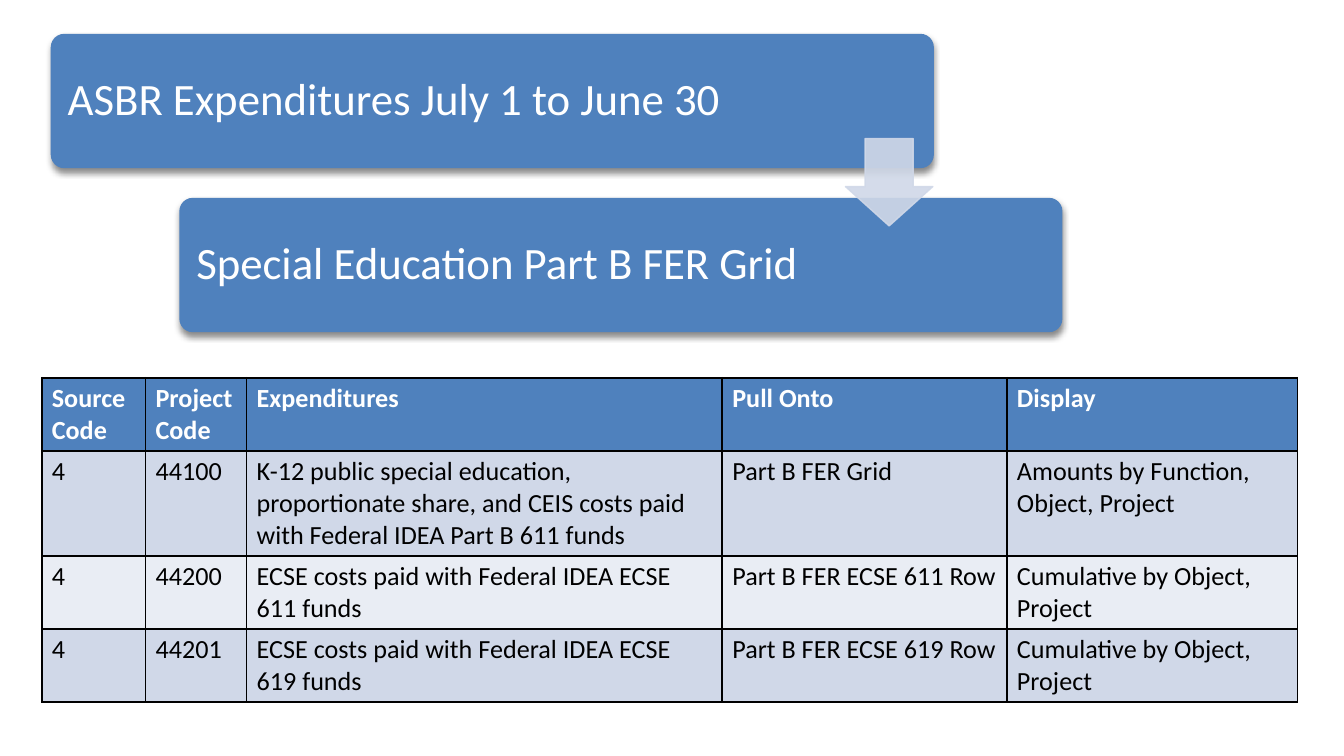
from lxml import etree
from pptx import Presentation
from pptx.dml.color import RGBColor
from pptx.enum.shapes import MSO_SHAPE
from pptx.enum.text import MSO_ANCHOR, MSO_AUTO_SIZE, PP_ALIGN
from pptx.oxml.ns import qn
from pptx.util import Cm, Pt

ROUNDED, DOWN_ARROW = MSO_SHAPE.ROUNDED_RECTANGLE, MSO_SHAPE.DOWN_ARROW
MIDDLE, LEFT, NO_FIT = MSO_ANCHOR.MIDDLE, PP_ALIGN.LEFT, MSO_AUTO_SIZE.NONE
FONT = "Calibri"
BLUE, PALE, PALER = "4F81BD", "D0D8E8", "E9EDF4"
BLACK, WHITE = "000000", "FFFFFF"

STEPS = ["ASBR Expenditures July 1 to June 30", "Special Education Part B FER Grid"]
STEP_LEFT, STEP_TOP, STEP_WIDTH, STEP_HEIGHT = 0.96, 0.64, 16.69, 2.54
SHIFT_RIGHT, SHIFT_DOWN = 2.43, 3.1
LABEL_INSET, LABEL_WIDTHS = 0.07, [14.07, 11.94]
ARROW_BOX = (15.98, 2.62, 1.65, 1.65)

TABLE_LEFT, TABLE_TOP = 0.79, 7.14
COLUMNS = [("Source Code", 1.96), ("Project Code", 1.91), ("Expenditures", 8.99),
           ("Pull Onto", 5.38), ("Display", 5.49)]
ROWS = [
    ("4", "44100", "K-12 public special education, proportionate share, and CEIS costs "
     "paid with Federal IDEA Part B 611 funds", "Part B FER Grid",
     "Amounts by Function, Object, Project"),
    ("4", "44200", "ECSE costs paid with Federal IDEA ECSE 611 funds",
     "Part B FER ECSE 611 Row", "Cumulative by Object, Project"),
    ("4", "44201", "ECSE costs paid with Federal IDEA ECSE 619 funds",
     "Part B FER ECSE 619 Row", "Cumulative by Object, Project"),
]
ROW_HEIGHTS = [1.35, 1.91, 1.35, 1.35]


def rgb(color):
    return RGBColor.from_string(color)


def paint(fill, color):
    fill.solid()
    fill.fore_color.rgb = rgb(color)


def add_child(parent, tag, **attributes):
    return etree.SubElement(parent, qn(tag), {key: str(value) for key, value in attributes.items()})


def write(paragraph, text, size, color, bold=False):
    run = paragraph.add_run()
    run.text = text
    run.font.name, run.font.size, run.font.bold = FONT, Pt(size), bold
    run.font.color.rgb = rgb(color)


def add_step(slide, left, top):
    step = slide.shapes.add_shape(ROUNDED, Cm(left), Cm(top), Cm(STEP_WIDTH), Cm(STEP_HEIGHT))
    step.adjustments[0] = 0.1
    paint(step.fill, BLUE)
    step.line.fill.background()
    step.shadow.inherit = False
    effects = step._element.spPr.find(qn("a:effectLst"))
    shadow = add_child(effects, "a:outerShdw", blurRad=Pt(3), dist=Pt(2.4), dir=5400000,
                       rotWithShape=0)
    add_child(add_child(shadow, "a:srgbClr", val=BLACK), "a:alpha", val=45000)


def set_label(label, text, left, top, width):
    label.left, label.top = Cm(left + LABEL_INSET), Cm(top + LABEL_INSET)
    label.width, label.height = Cm(width), Cm(STEP_HEIGHT - 2 * LABEL_INSET)
    frame = label.text_frame
    frame.word_wrap, frame.auto_size, frame.vertical_anchor = True, NO_FIT, MIDDLE
    frame.margin_left = frame.margin_right = frame.margin_top = frame.margin_bottom = Cm(0.25)
    paragraph = frame.paragraphs[0]
    paragraph.alignment, paragraph.line_spacing = LEFT, 0.9
    write(paragraph, text, 24, WHITE)


def add_steps(slide):
    title = slide.shapes.title
    for index, (text, width) in enumerate(zip(STEPS, LABEL_WIDTHS)):
        left, top = STEP_LEFT + index * SHIFT_RIGHT, STEP_TOP + index * SHIFT_DOWN
        add_step(slide, left, top)
        if index == 0:
            slide.shapes._spTree.append(title._element)
            label = title
        else:
            label = slide.shapes.add_textbox(0, 0, 0, 0)
        set_label(label, text, left, top, width)


def add_arrow(slide):
    arrow = slide.shapes.add_shape(DOWN_ARROW, *map(Cm, ARROW_BOX))
    arrow.adjustments[0], arrow.adjustments[1] = 0.55, 0.45
    arrow.shadow.inherit = False
    paint(arrow.fill, PALE)
    paint(arrow.line.fill, PALE)
    arrow.line.width = Pt(0.79)
    for color in arrow._element.spPr.iter(qn("a:srgbClr")):
        add_child(color, "a:alpha", val=90000)


def set_cell(cell, text, fill, color, bold):
    cell.margin_left = cell.margin_right = Cm(0.19)
    cell.margin_top = cell.margin_bottom = Cm(0.09)
    write(cell.text_frame.paragraphs[0], text, 14, color, bold)
    properties = cell._tc.get_or_add_tcPr()
    for side in ("a:lnL", "a:lnR", "a:lnT", "a:lnB"):
        border = add_child(properties, side, w=Pt(1))
        add_child(add_child(border, "a:solidFill"), "a:srgbClr", val=BLACK)
    paint(cell.fill, fill)


def add_spending_table(slide):
    headings, widths = zip(*COLUMNS)
    lines = [headings, *ROWS]
    table = slide.shapes.add_table(len(lines), len(headings), Cm(TABLE_LEFT), Cm(TABLE_TOP),
                                   Cm(sum(widths)), Cm(sum(ROW_HEIGHTS))).table
    for column, width in zip(table.columns, widths):
        column.width = Cm(width)
    for index, (row, height, texts) in enumerate(zip(table.rows, ROW_HEIGHTS, lines)):
        row.height = Cm(height)
        heading = index == 0
        fill = BLUE if heading else PALE if index % 2 else PALER
        for cell, text in zip(row.cells, texts):
            set_cell(cell, text, fill, WHITE if heading else BLACK, heading)


def main():
    """Build the slide that shows how expenditures reach the Part B FER Grid."""
    deck = Presentation()
    deck.slide_width, deck.slide_height = Cm(25.4), Cm(14.29)
    slide = deck.slides.add_slide(deck.slide_layouts.get_by_name("Title Only"))
    add_spending_table(slide)
    add_steps(slide)
    add_arrow(slide)
    deck.save("out.pptx")


if __name__ == "__main__":
    main()
